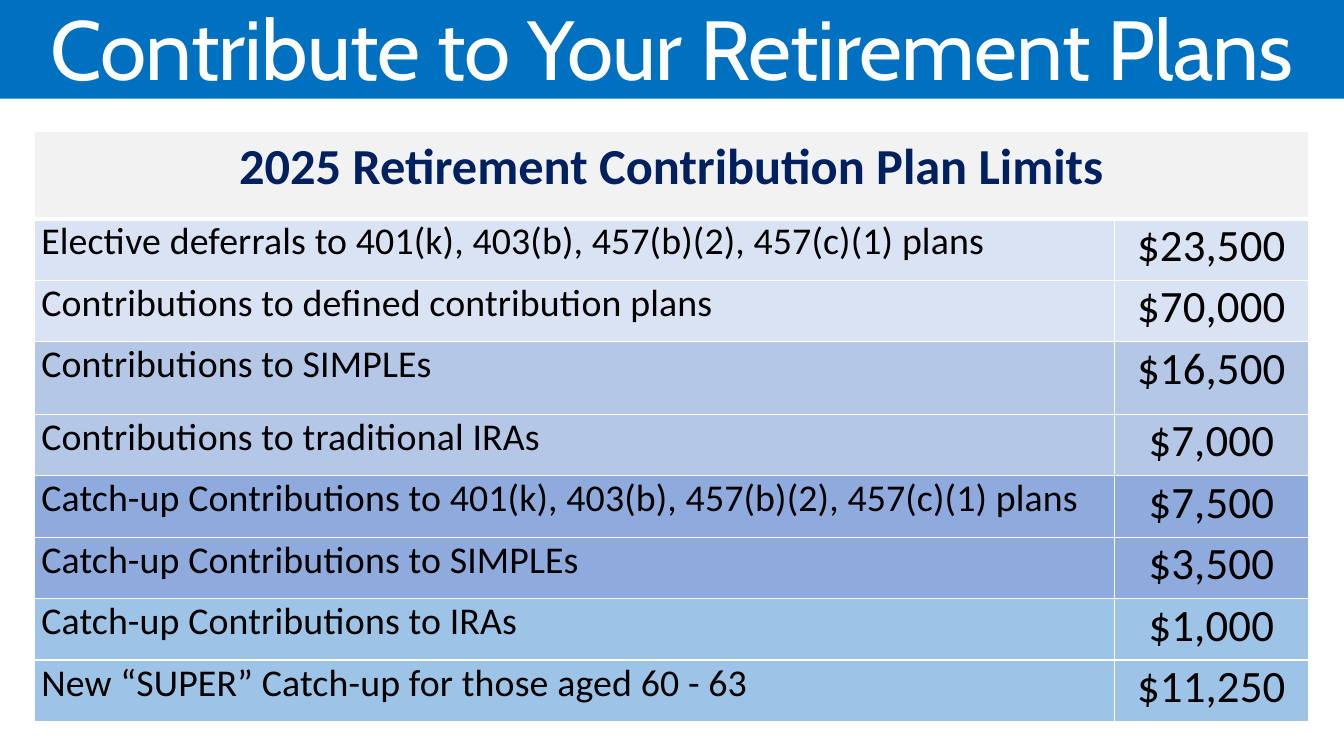
from lxml.etree import SubElement
from pptx import Presentation
from pptx.dml.color import RGBColor
from pptx.enum.shapes import MSO_SHAPE as Shape
from pptx.enum.text import MSO_ANCHOR as Anchor, PP_ALIGN as Align
from pptx.oxml.ns import qn
from pptx.util import Inches, Pt

BLUE = RGBColor(0x00, 0x70, 0xC0)
NAVY = RGBColor(0x00, 0x20, 0x60)
GREY = RGBColor(0xF2, 0xF2, 0xF2)
WHITE = RGBColor(0xFF, 0xFF, 0xFF)
BLACK = RGBColor(0x00, 0x00, 0x00)
TINTS = [  # one tint for each pair of rows
    RGBColor(0xDA, 0xE3, 0xF3),
    RGBColor(0xB4, 0xC7, 0xE7),
    RGBColor(0x8F, 0xAA, 0xDC),
    RGBColor(0x9D, 0xC3, 0xE6),
]
LIMITS = [
    ("Elective deferrals to 401(k), 403(b), 457(b)(2), 457(c)(1) plans", "$23,500"),
    ("Contributions to defined contribution plans", "$70,000"),
    ("Contributions to SIMPLEs", "$16,500"),
    ("Contributions to traditional IRAs", "$7,000"),
    ("Catch-up Contributions to 401(k), 403(b), 457(b)(2), 457(c)(1) plans", "$7,500"),
    ("Catch-up Contributions to SIMPLEs", "$3,500"),
    ("Catch-up Contributions to IRAs", "$1,000"),
    ("New “SUPER” Catch-up for those aged 60 - 63", "$11,250"),
]
COLS = [10.71, 1.93]
ROWS = [0.87, 0.61, 0.61, 0.72] + [0.61] * 5


def write(frame, text, face, size, color, align, bold=False, track=0):
    """Fill the first paragraph; track is in hundredths of a point."""
    para = frame.paragraphs[0]
    run = para.add_run()
    run.text = text
    run._r.get_or_add_rPr().set("spc", str(track))
    para.alignment = align
    font = para.font
    font.name, font.size, font.bold = face, Pt(size), bold
    font.color.rgb = color
    return para


def paint(cell, color, base=1):
    """Fill a cell and give it white borders, base points wide below."""
    props = cell._tc.get_or_add_tcPr()
    for side, width in (("L", 1), ("R", 1), ("T", 1), ("B", base)):
        line = SubElement(props, qn(f"a:ln{side}"), w=str(Pt(width)))
        fill = SubElement(line, qn("a:solidFill"))
        SubElement(fill, qn("a:srgbClr"), val=str(WHITE))
    cell.fill.solid()
    cell.fill.fore_color.rgb = color


deck = Presentation()
deck.slide_width, deck.slide_height = Inches(13.33), Inches(7.5)
slide = deck.slides.add_slide(deck.slide_layouts[6])

# Title band
band = slide.shapes.add_shape(
    Shape.RECTANGLE, 0, Inches(-0.02), deck.slide_width, Inches(1))
band.shadow.inherit = False
band.fill.solid()
band.fill.fore_color.rgb = BLUE
band.line.fill.background()
frame = band.text_frame
frame.word_wrap = True
frame.vertical_anchor = Anchor.MIDDLE
frame.margin_top, frame.margin_bottom = Inches(0.22), 0
title = write(frame, "Contribute to Your Retirement Plans",
              "Cabin", 59.9, WHITE, Align.CENTER, track=-60)
title.line_spacing = 0.7

# Table grid
table = slide.shapes.add_table(
    len(ROWS), len(COLS), Inches(0.34), Inches(1.3),
    Inches(sum(COLS)), Inches(sum(ROWS))).table
table.horz_banding = False
for col, width in zip(table.columns, COLS):
    col.width = Inches(width)
for row, height in zip(table.rows, ROWS):
    row.height = Inches(height)

# Heading row
head = table.cell(0, 0)
head.merge(table.cell(0, 1))
for cell in table.rows[0].cells:
    paint(cell, GREY, 3)
write(head.text_frame, "2025 Retirement Contribution Plan Limits",
      "Calibri", 36, NAVY, Align.CENTER, bold=True)

# Plan rows
for i, pair in enumerate(LIMITS):
    looks = ((27, Align.JUSTIFY), (32, Align.CENTER))
    for j, (text, (size, align)) in enumerate(zip(pair, looks)):
        cell = table.cell(i + 1, j)
        paint(cell, TINTS[i // 2])
        cell.margin_left = cell.margin_right = Inches(0.07)
        cell.margin_top = cell.margin_bottom = 0
        write(cell.text_frame, text, "Calibri", size, BLACK, align, track=10)

deck.save("out.pptx")
